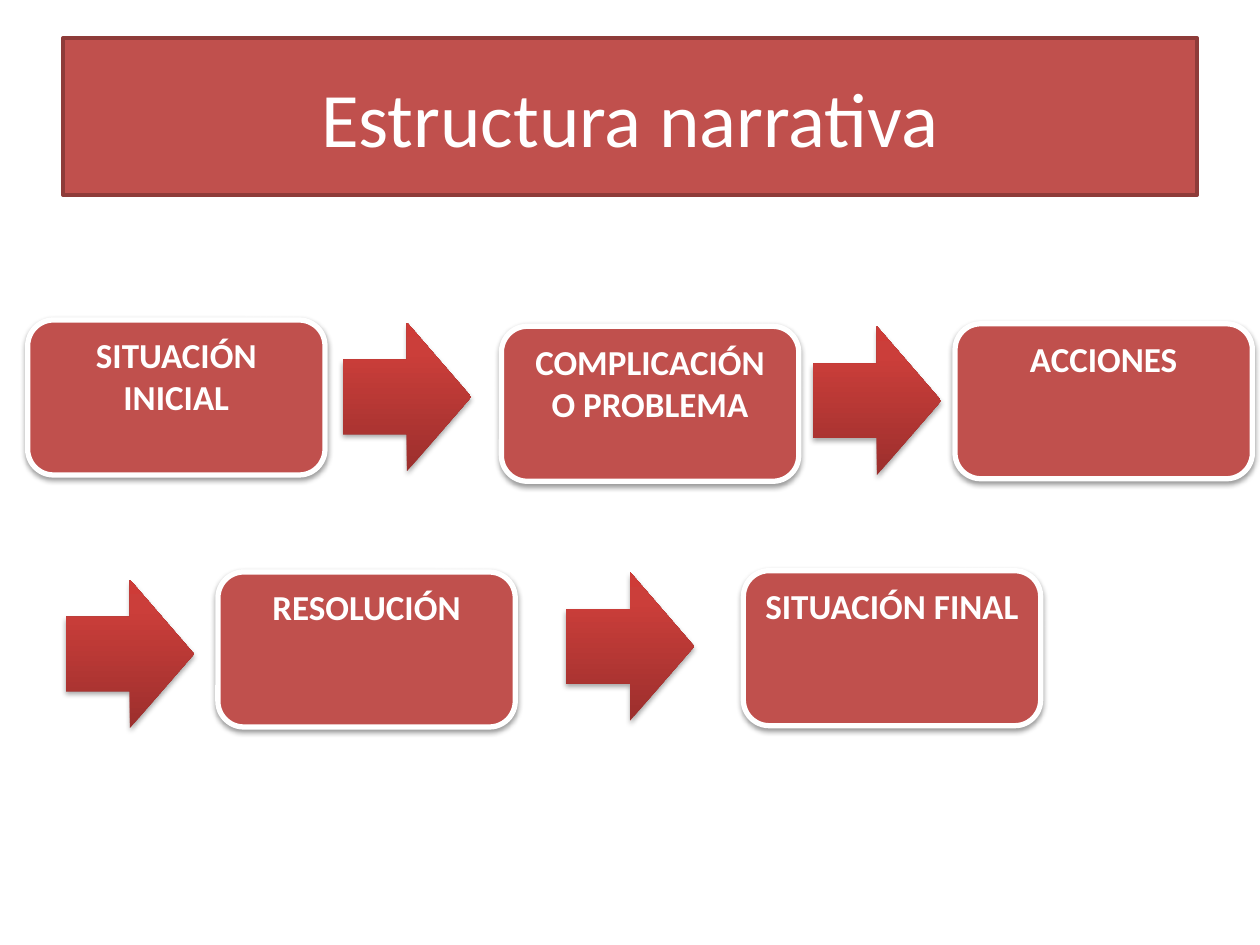
from copy import deepcopy

from lxml import etree
from pptx import Presentation
from pptx.dml.color import RGBColor
from pptx.enum.shapes import MSO_SHAPE
from pptx.enum.text import MSO_ANCHOR, PP_ALIGN
from pptx.oxml.ns import qn
from pptx.util import Inches, Pt

ARROW, CARD = MSO_SHAPE.RIGHT_ARROW, MSO_SHAPE.ROUNDED_RECTANGLE
TOP, MIDDLE, CENTER = MSO_ANCHOR.TOP, MSO_ANCHOR.MIDDLE, PP_ALIGN.CENTER
RED, WHITE = "C0504D", "FFFFFF"


def write(sp, text, size, bold=False, anchor=TOP, color=WHITE):
    tf = sp.text_frame
    tf.word_wrap = True
    tf.vertical_anchor = anchor
    p = tf.paragraphs[0]
    p.alignment = CENTER
    r = p.add_run()
    r.text = text
    r.font.name, r.font.size, r.font.bold = "Calibri", Pt(size), bold
    r.font.color.rgb = RGBColor.from_string(color)


def add_shadow(sp, alpha, distance):
    sp.shadow.inherit = False
    effects = sp._element.spPr.find(qn("a:effectLst"))
    shadow = etree.SubElement(effects, qn("a:outerShdw"), blurRad=str(Pt(3.1)),
                              dist=str(Pt(distance)), dir="5400000", rotWithShape="0")
    color = etree.SubElement(shadow, qn("a:srgbClr"), val="000000")
    etree.SubElement(color, qn("a:alpha"), val=str(alpha * 1000))


prs = Presentation()
prs.slide_width, prs.slide_height = Inches(10), Inches(7.5)
slide = prs.slides.add_slide(prs.slide_layouts[5])

# Title banner
sp = slide.shapes.title
sp.left, sp.top, sp.width, sp.height = (Inches(v) for v in (0.5, 0.3, 9, 1.25))
sp.fill.solid()
sp.fill.fore_color.rgb = RGBColor.from_string(RED)
sp.line.color.rgb = RGBColor.from_string("8E3B39")
sp.line.width = Pt(2)
write(sp, "Estructura narrativa", 44, anchor=MIDDLE)

# Arrows between the stages, dark at the bottom
arrows = [(2.72, 2.56), (4.49, 4.54), (6.45, 2.59), (0.52, 4.6)]
gradient = [(0, "9C2F2D"), (0.8, "CB3E3A"), (1, "CE3B37")]
for x, y in arrows:
    sp = slide.shapes.add_shape(ARROW, Inches(x), Inches(y), Inches(1.02), Inches(1.18))
    sp.fill.gradient()
    sp.fill.gradient_angle = 90
    stops = sp._element.spPr.find(".//" + qn("a:gsLst"))
    stops.append(deepcopy(stops[-1]))
    for stop, (position, color) in zip(sp.fill.gradient_stops, gradient):
        stop.position = position
        stop.color.rgb = RGBColor.from_string(color)
    sp.line.fill.background()
    add_shadow(sp, 35, 1.8)

# Stages of the story
stages = [
    ("SITUACIÓN INICIAL", 0.22, 2.54),
    ("COMPLICACIÓN O PROBLEMA", 3.98, 2.59),
    ("ACCIONES", 7.58, 2.57),
    ("RESOLUCIÓN", 1.73, 4.54),
    ("SITUACIÓN FINAL", 5.9, 4.53),
]
for text, x, y in stages:
    sp = slide.shapes.add_shape(CARD, Inches(x), Inches(y), Inches(2.36), Inches(1.23))
    sp.fill.solid()
    sp.fill.fore_color.rgb = RGBColor.from_string(RED)
    sp.line.color.rgb = RGBColor.from_string(WHITE)
    sp.line.width = Pt(3)
    add_shadow(sp, 38, 1.6)
    write(sp, text, 20, bold=True)

prs.save("out.pptx")
